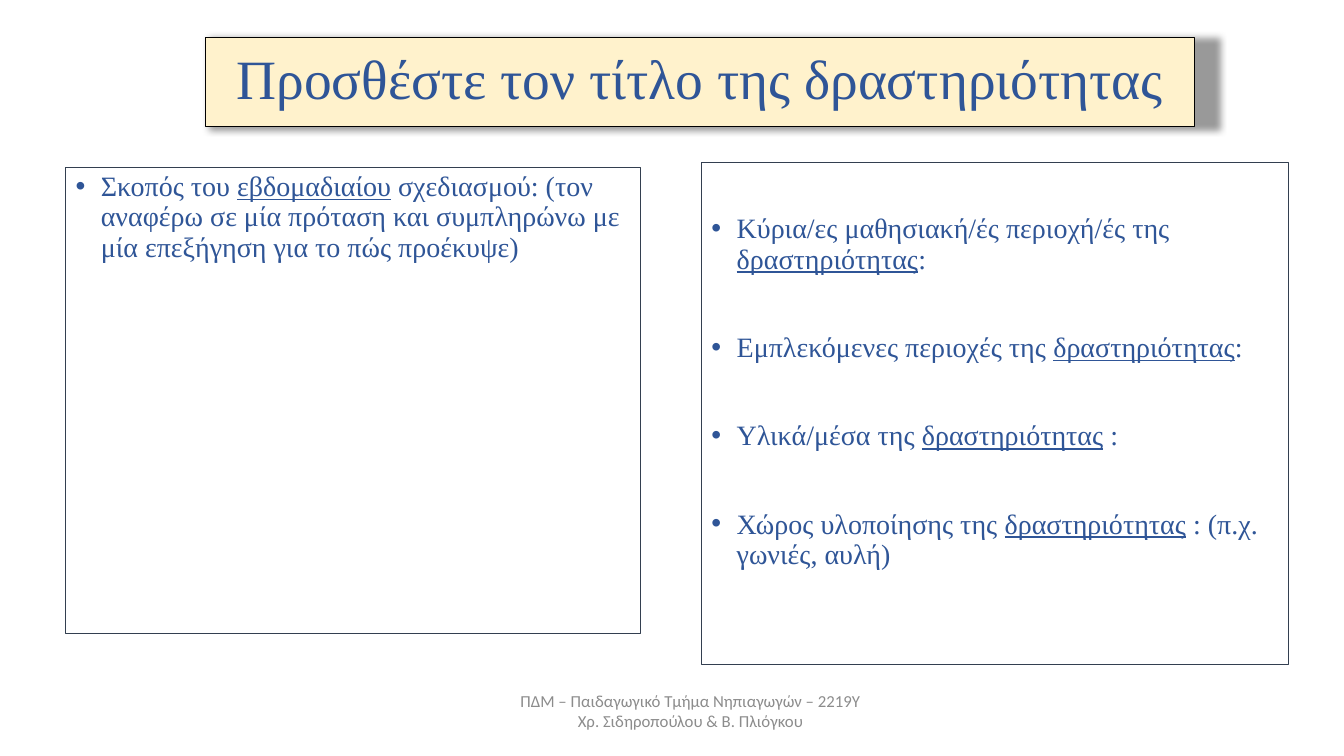
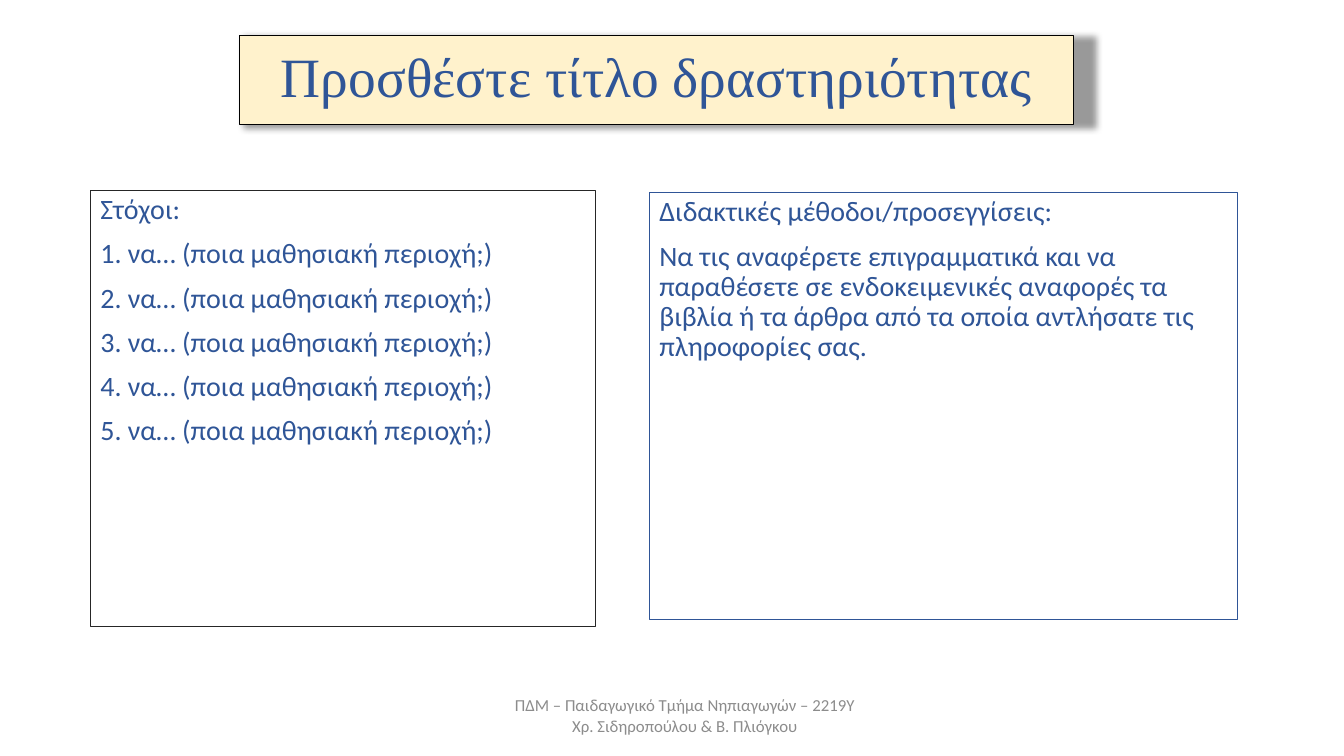
from dataclasses import dataclass

from lxml import etree
from pptx import Presentation
from pptx import util as u
from pptx.dml.color import RGBColor
from pptx.enum import text
from pptx.oxml import ns


@dataclass(frozen=True)
class Theme:
    blue: str = "2F5597"
    cream: str = "FFF2CC"
    black: str = "000000"
    slate: str = "333F50"
    charcoal: str = "262626"
    gray: str = "8C8C8C"
    serif: str = "Times New Roman"
    sans: str = "Calibri"
    title_size: float = 39.6
    body_size: float = 20
    footer_size: float = 12
    border: float = 0.75
    tight: float = 0.9


@dataclass(frozen=True)
class Area:
    left: float
    top: float
    width: float
    height: float


@dataclass(frozen=True)
class Panel:
    area: Area
    border: str
    font: str
    lines: tuple[str, ...]
    bulleted: bool = False
    gap: float = 10
    top_inset: float = 3.6


@dataclass(frozen=True)
class Page:
    title: str
    title_area: Area
    shadow_anchor: str
    panels: tuple[Panel, Panel]
    footer_area: Area


THEME = Theme()
TWO_CONTENT = 3
FOOTER = ("ΠΔΜ – Παιδαγωγικό Τμήμα Νηπιαγωγών – 2219Υ",
          "Χρ. Σιδηροπούλου & Β. Πλιόγκου")
GOALS = tuple(f"{number}. να… (ποια μαθησιακή περιοχή;)" for number in range(1, 6))

PAGES = (
    Page(
        "Προσθέστε τον τίτλο της δραστηριότητας",
        Area(146.5, 26.7, 707, 63.5), "tl",
        (
            Panel(Area(46.8, 119.5, 410.4, 333), THEME.slate, THEME.serif,
                  ("Σκοπός του _εβδομαδιαίου_ σχεδιασμού: (τον αναφέρω σε μία πρόταση "
                   "και συμπληρώνω με μία επεξήγηση για το πώς προέκυψε)",),
                  bulleted=True),
            Panel(Area(501, 116.3, 419.5, 358.5), THEME.slate, THEME.serif,
                  ("Κύρια/ες μαθησιακή/ές περιοχή/ές της _δραστηριότητας_:",
                   "Εμπλεκόμενες περιοχές της _δραστηριότητας_:",
                   "Υλικά/μέσα της _δραστηριότητας_ :",
                   "Χώρος υλοποίησης της _δραστηριότητας_ : (π.χ. γωνιές, αυλή)"),
                  bulleted=True, gap=41.5, top_inset=37),
        ),
        Area(265, 484.5, 456.5, 46),
    ),
    Page(
        "Προσθέστε τίτλο δραστηριότητας",
        Area(170.8, 25.3, 596.2, 63.5), "ctr",
        (
            Panel(Area(64.5, 136, 361, 311.5), THEME.charcoal, THEME.sans,
                  ("Στόχοι:", *GOALS)),
            Panel(Area(463.8, 137.5, 420, 304.7), THEME.blue, THEME.sans,
                  ("Διδακτικές μέθοδοι/προσεγγίσεις:",
                   "Να τις αναφέρετε επιγραμματικά και να παραθέσετε σε ενδοκειμενικές "
                   "αναφορές τα βιβλία ή τα άρθρα από τα οποία αντλήσατε τις "
                   "πληροφορίες σας.")),
        ),
        Area(263.5, 494.5, 451.5, 33),
    ),
)


def place(box, area: Area) -> None:
    box.left, box.top = u.Pt(area.left), u.Pt(area.top)
    box.width, box.height = u.Pt(area.width), u.Pt(area.height)


def outline(box, color: str) -> None:
    box.line.color.rgb = RGBColor.from_string(color)
    box.line.width = u.Pt(THEME.border)


def add_shadow(box, anchor: str) -> None:
    effects = etree.SubElement(box._element.spPr, ns.qn("a:effectLst"))
    shadow = etree.SubElement(
        effects, ns.qn("a:outerShdw"), blurRad=str(u.Pt(5)),
        sx="102000", sy="102000", algn=anchor, rotWithShape="0")
    color = etree.SubElement(shadow, ns.qn("a:srgbClr"), val=THEME.black)
    etree.SubElement(color, ns.qn("a:alpha"), val="40000")


def set_bullet(para, bulleted: bool) -> None:
    properties = para._p.get_or_add_pPr()
    indent = u.Pt(18) if bulleted else 0
    properties.set("marL", str(indent))
    properties.set("indent", str(-indent))
    if bulleted:
        etree.SubElement(properties, ns.qn("a:buFont"), typeface="Arial")
        etree.SubElement(properties, ns.qn("a:buChar"), char="•")
    else:
        etree.SubElement(properties, ns.qn("a:buNone"))


def write_text(box, lines: tuple[str, ...], *, font: str, size: float, color: str,
               align=text.PP_ALIGN.LEFT, anchor=text.MSO_ANCHOR.TOP,
               spacing: float = 1.0, gap: float = 0, bulleted: bool = False,
               top_inset: float = 3.6) -> None:
    frame = box.text_frame
    frame.word_wrap = True
    frame.auto_size = text.MSO_AUTO_SIZE.NONE
    frame.vertical_anchor = anchor
    frame.margin_left = frame.margin_right = u.Pt(7.2)
    frame.margin_top, frame.margin_bottom = u.Pt(top_inset), u.Pt(3.6)
    for index, line in enumerate(lines):
        para = frame.add_paragraph() if index else frame.paragraphs[0]
        para.alignment = align
        para.line_spacing = spacing
        para.space_before = u.Pt(gap if index else 0)
        set_bullet(para, bulleted)
        for position, part in enumerate(line.split("_")):
            span = para.add_run()
            span.text = part
            span.font.name = font
            span.font.size = u.Pt(size)
            span.font.color.rgb = RGBColor.from_string(color)
            if position % 2:
                span.font.underline = True


def draw_title(box, page: Page) -> None:
    place(box, page.title_area)
    box.fill.solid()
    box.fill.fore_color.rgb = RGBColor.from_string(THEME.cream)
    outline(box, THEME.black)
    add_shadow(box, page.shadow_anchor)
    write_text(box, (page.title,), font=THEME.serif, size=THEME.title_size,
               color=THEME.blue, align=text.PP_ALIGN.CENTER,
               anchor=text.MSO_ANCHOR.MIDDLE, spacing=THEME.tight)


def draw_panel(box, panel: Panel) -> None:
    place(box, panel.area)
    outline(box, panel.border)
    write_text(box, panel.lines, font=panel.font, size=THEME.body_size,
               color=THEME.blue, spacing=THEME.tight, gap=panel.gap,
               bulleted=panel.bulleted, top_inset=panel.top_inset)


def draw_footer(slide, area: Area) -> None:
    box = slide.shapes.add_textbox(u.Pt(area.left), u.Pt(area.top),
                                   u.Pt(area.width), u.Pt(area.height))
    write_text(box, FOOTER, font=THEME.sans, size=THEME.footer_size,
               color=THEME.gray, align=text.PP_ALIGN.CENTER,
               anchor=text.MSO_ANCHOR.MIDDLE)


def draw_page(deck, page: Page) -> None:
    slide = deck.slides.add_slide(deck.slide_layouts[TWO_CONTENT])
    draw_title(slide.shapes.title, page)
    for index, panel in enumerate(page.panels, start=1):
        draw_panel(slide.placeholders[index], panel)
    draw_footer(slide, page.footer_area)


def main() -> None:
    deck = Presentation()
    deck.slide_width, deck.slide_height = u.Pt(960), u.Pt(540)
    for page in PAGES:
        draw_page(deck, page)
    deck.save("out.pptx")


if __name__ == "__main__":
    main()
